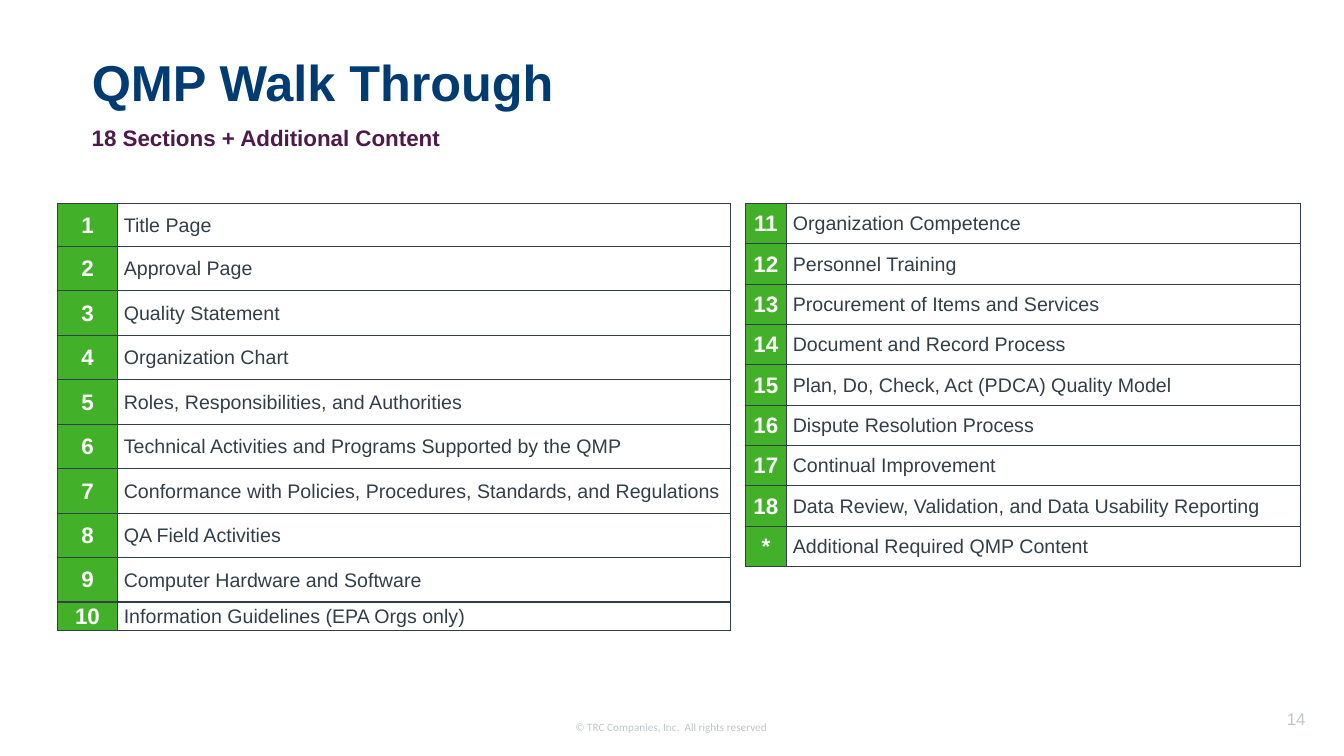
import pptx
import pptx.util
import pptx.dml.color
import pptx.enum.text
import pptx.oxml
import pptx.oxml.ns
from pptx.util import Cm, Pt
from pptx.dml.color import RGBColor
from pptx.enum.text import MSO_ANCHOR, MSO_AUTO_SIZE, PP_ALIGN

NAVY = RGBColor(0x00, 0x3C, 0x71)
PLUM = RGBColor(0x4F, 0x19, 0x4B)
GREEN = RGBColor(0x43, 0xB0, 0x2A)
SLATE = RGBColor(0x33, 0x3F, 0x48)
GRAY = RGBColor(0xC1, 0xC6, 0xC8)
WHITE = RGBColor(0xFF, 0xFF, 0xFF)


def write(frame, text, size, color, bold=False, font="Arial", align=PP_ALIGN.LEFT,
          anchor=MSO_ANCHOR.MIDDLE, wrap=True):
    frame.auto_size = MSO_AUTO_SIZE.NONE
    frame.word_wrap = wrap
    frame.vertical_anchor = anchor
    paragraph = frame.paragraphs[0]
    paragraph.alignment = align
    run = paragraph.add_run()
    run.text = text
    run.font.size = Pt(size)
    run.font.name = font
    run.font.bold = bold
    run.font.color.rgb = color


def add_borders(cell):
    for side in ("lnL", "lnR", "lnT", "lnB"):
        cell._tc.get_or_add_tcPr().append(pptx.oxml.parse_xml(
            f'<a:{side} {pptx.oxml.ns.nsdecls("a")} w="12700"><a:solidFill>'
            f'<a:srgbClr val="{SLATE}"/></a:solidFill></a:{side}>'))


deck = pptx.Presentation()
deck.slide_width, deck.slide_height = Cm(33.87), Cm(19.05)
slide = deck.slides.add_slide(deck.slide_layouts[5])

# Title and subtitle
title = slide.shapes.title
title.left, title.top, title.width, title.height = Cm(2.06), Cm(1.68), Cm(23.95), Cm(1.27)
write(title.text_frame, "QMP Walk Through", 36, NAVY, bold=True, anchor=MSO_ANCHOR.BOTTOM)
subtitle = slide.shapes.add_textbox(Cm(2.06), Cm(2.82), Cm(23.29), Cm(1.27))
write(subtitle.text_frame, "18 Sections + Additional Content", 16, PLUM, bold=True)

# Section tables: left edge, column widths, row heights, rows
first_sections = [
    "Title Page", "Approval Page", "Quality Statement", "Organization Chart",
    "Roles, Responsibilities, and Authorities",
    "Technical Activities and Programs Supported by the QMP",
    "Conformance with Policies, Procedures, Standards, and Regulations",
    "QA Field Activities", "Computer Hardware and Software",
    "Information Guidelines (EPA Orgs only)",
]
last_sections = [
    "Organization Competence", "Personnel Training", "Procurement of Items and Services",
    "Document and Record Process", "Plan, Do, Check, Act (PDCA) Quality Model",
    "Dispute Resolution Process", "Continual Improvement",
    "Data Review, Validation, and Data Usability Reporting",
]
first_rows = [(str(n), name) for n, name in enumerate(first_sections, 1)]
last_rows = [(str(n), name) for n, name in enumerate(last_sections, 11)]
last_rows.append(("*", "Additional Required QMP Content"))

section_tables = [
    (1.45, (1.51, 15.44), [1.08] + [1.12] * 8 + [0.72], first_rows),
    (18.78, (1.04, 12.95), [9.15 / 9] * 9, last_rows),
]
for left, widths, heights, rows in section_tables:
    sections = slide.shapes.add_table(len(rows), 2, Cm(left), Cm(5.13),
                                      Cm(sum(widths)), Cm(sum(heights))).table
    sections.first_row = sections.horz_banding = False
    for column, width in zip(sections.columns, widths):
        column.width = Cm(width)
    for r, (number, name) in enumerate(rows):
        sections.rows[r].height = Cm(heights[r])
        number_cell, name_cell = sections.cell(r, 0), sections.cell(r, 1)
        for cell in (number_cell, name_cell):
            cell.margin_left = cell.margin_right = cell.margin_top = Cm(0.02)
            cell.margin_bottom = 0
            cell.vertical_anchor = MSO_ANCHOR.MIDDLE
            add_borders(cell)
        number_cell.fill.solid()
        number_cell.fill.fore_color.rgb = GREEN
        name_cell.fill.background()
        name_cell.margin_left = Cm(0.16)
        write(number_cell.text_frame, number, 16, WHITE, bold=True, align=PP_ALIGN.CENTER)
        write(name_cell.text_frame, name, 14, SLATE)

# Copyright line and page number
copyright_line = slide.shapes.add_textbox(Cm(14.25), Cm(18.03), Cm(5.38), Cm(0.61))
write(copyright_line.text_frame, "© TRC Companies, Inc.  All rights reserved", 8, GRAY,
      font="Calibri", anchor=MSO_ANCHOR.TOP, wrap=False)
page_number = slide.shapes.add_textbox(Cm(26.29), Cm(17.6), Cm(6.86), Cm(1.02))
write(page_number.text_frame, "14", 12, GRAY, align=PP_ALIGN.RIGHT)

deck.save("out.pptx")
